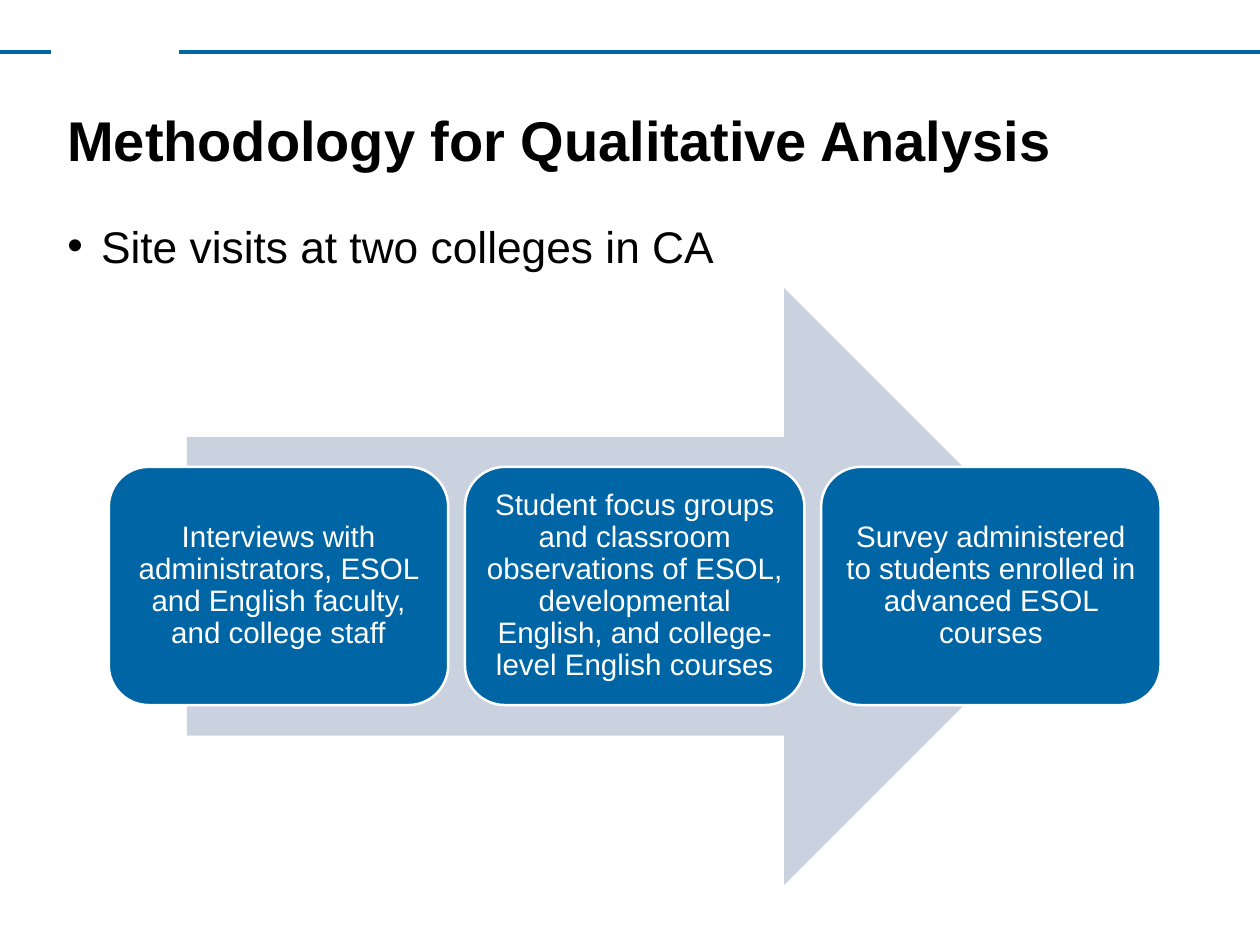
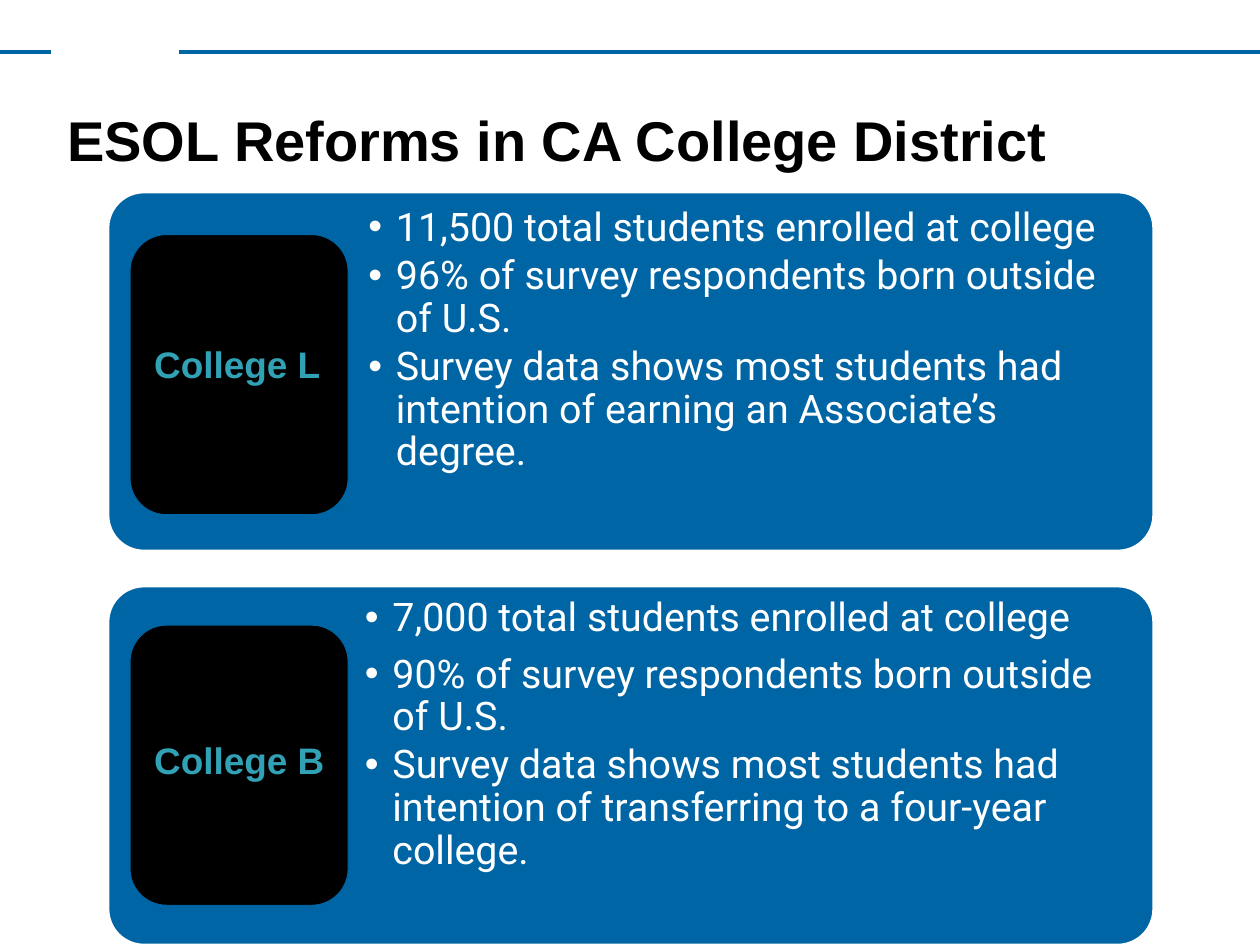
from lxml import etree
from pptx import Presentation
from pptx.dml.color import RGBColor
from pptx.enum import shapes, text
from pptx.oxml.ns import qn
from pptx.util import Cm, Pt

BLUE = RGBColor(0x00, 0x65, 0xA4)
PALE = RGBColor(0xCA, 0xD2, 0xE0)
TEAL = RGBColor(0x31, 0xA2, 0xB6)
BLACK = RGBColor(0, 0, 0)
WHITE = RGBColor(0xFF, 0xFF, 0xFF)
WIDTH, HEIGHT = 36.12, 27.1

# Content
METHOD_TITLE = "Methodology for Qualitative Analysis"
METHOD_POINT = "Site visits at two colleges in CA"
STEPS = [
    "Interviews with administrators, ESOL and English faculty, and college staff",
    "Student focus groups and classroom observations of ESOL, developmental "
    "English, and college-level English courses",
    "Survey administered to students enrolled in advanced ESOL courses",
]
REFORM_TITLE = "ESOL Reforms in CA College District"
# Vertical places in cm; each point is (space before in points, wording)
COLLEGES = [
    dict(name="College L", top=5.51, tag_top=6.73, name_top=9.55, inset=0.43, points=[
        (0, "11,500 total students enrolled at college"),
        (4.8, "96% of survey respondents born outside of U.S."),
        (4.8, "Survey data shows most students had intention of earning an "
              "Associate’s degree."),
    ]),
    dict(name="College B", top=16.81, tag_top=17.93, name_top=20.9, inset=0.33, points=[
        (0, "7,000 total students enrolled at college"),
        (11.2, "90% of survey respondents born outside of U.S."),
        (4.8, "Survey data shows most students had intention of transferring "
              "to a four-year college."),
    ]),
]


def add_run(p, wording, size, color, font="Arial", bold=False):
    r = p.add_run()
    r.text = wording
    r.font.size, r.font.name, r.font.bold = Pt(size), font, bold
    r.font.color.rgb = color


def set_frame(shape, inset_x=0.25, inset_y=0.25, anchor=text.MSO_ANCHOR.TOP):
    tf = shape.text_frame
    tf.word_wrap = True
    tf.auto_size = text.MSO_AUTO_SIZE.NONE
    tf.vertical_anchor = anchor
    tf.margin_left = tf.margin_right = Cm(inset_x)
    tf.margin_top = tf.margin_bottom = Cm(inset_y)
    return tf


def add_bullet(p, indent, color):
    pPr = p._p.get_or_add_pPr()
    pPr.set("marL", str(Cm(indent)))
    pPr.set("indent", str(-Cm(indent)))
    bu_color = etree.SubElement(pPr, qn("a:buClr"))
    etree.SubElement(bu_color, qn("a:srgbClr")).set("val", str(color))
    etree.SubElement(pPr, qn("a:buFont")).set("typeface", "Arial")
    etree.SubElement(pPr, qn("a:buChar")).set("char", "•")


def add_box(s, kind, box, fill, adjust, line=None, weight=2):
    sp = s.shapes.add_shape(kind, *map(Cm, box))
    sp.shadow.inherit = False
    for i, value in enumerate(adjust):
        sp.adjustments[i] = value
    sp.fill.solid()
    sp.fill.fore_color.rgb = fill
    if line is None:
        sp.line.fill.background()
    else:
        sp.line.color.rgb = line
        sp.line.width = Pt(weight)
    return sp


def add_text(s, box, inset_x=0.25, inset_y=0.25):
    return set_frame(s.shapes.add_textbox(*map(Cm, box)), inset_x, inset_y)


def new_slide(prs, title):
    s = prs.slides.add_slide(prs.slide_layouts[5])
    # Broken rule across the top
    for x1, x2 in [(5.13, WIDTH), (0, 1.47)]:
        rule = s.shapes.add_connector(
            shapes.MSO_CONNECTOR.STRAIGHT, Cm(x1), Cm(1.5), Cm(x2), Cm(1.5))
        rule.line.color.rgb = BLUE
        rule.line.width = Pt(3)
        etree.SubElement(rule._element.spPr, qn("a:effectLst"))
    # Title
    sp = s.shapes.title
    sp.left, sp.top, sp.width, sp.height = map(Cm, (1.68, 3, 33.05, 5.59))
    p = set_frame(sp).paragraphs[0]
    p.alignment = text.PP_ALIGN.LEFT
    p.line_spacing = 0.9
    add_run(p, title, 45.5, BLACK, bold=True)
    return s


def build_method(prs):
    s = new_slide(prs, METHOD_TITLE)
    add_box(s, shapes.MSO_SHAPE.RIGHT_ARROW, (5.36, 8.26, 25.68, 17.12),
            PALE, (0.5, 0.5))
    # Steps in a row over the arrow
    width, gap = 9.73, 0.48
    for i, step in enumerate(STEPS):
        card = add_box(s, shapes.MSO_SHAPE.ROUNDED_RECTANGLE,
                       (3.12 + i * (width + gap), 13.39, width, 6.83),
                       BLUE, (0.167,), WHITE)
        p = set_frame(card, anchor=text.MSO_ANCHOR.MIDDLE).paragraphs[0]
        p.alignment = text.PP_ALIGN.CENTER
        p.line_spacing = 0.9
        add_run(p, step, 24, WHITE)
    # Lead point
    p = add_text(s, (1.68, 6.15, 23.77, 1.8), inset_y=0.13).paragraphs[0]
    add_bullet(p, 0.97, BLACK)
    add_run(p, METHOD_POINT, 36, BLACK)


def build_reforms(prs):
    s = new_slide(prs, REFORM_TITLE)
    rounded = shapes.MSO_SHAPE.ROUNDED_RECTANGLE
    for college in COLLEGES:
        # Panel with its points
        add_box(s, rounded, (3.1, college["top"], 29.97, 10.29), BLUE, (0.1,), WHITE)
        inset = college["inset"]
        tf = add_text(s, (10.13, college["top"], 22.66, 9.8), inset, inset)
        for i, (before, point) in enumerate(college["points"]):
            p = tf.add_paragraph() if i else tf.paragraphs[0]
            add_bullet(p, 0.79, WHITE)
            p.line_spacing = 0.9
            if before:
                p.space_before = Pt(before)
            add_run(p, point, 32, WHITE, "Roboto")
        # Name tag
        add_box(s, rounded, (3.73, college["tag_top"], 6.25, 8.03),
                BLACK, (0.167,), BLUE, 0.75)
        tf = add_text(s, (4.17, college["name_top"], 5.79, 1.52))
        add_run(tf.paragraphs[0], college["name"], 30, TEAL, bold=True)


def main():
    prs = Presentation()
    prs.slide_width, prs.slide_height = Cm(WIDTH), Cm(HEIGHT)
    build_method(prs)
    build_reforms(prs)
    prs.save("out.pptx")


if __name__ == "__main__":
    main()
